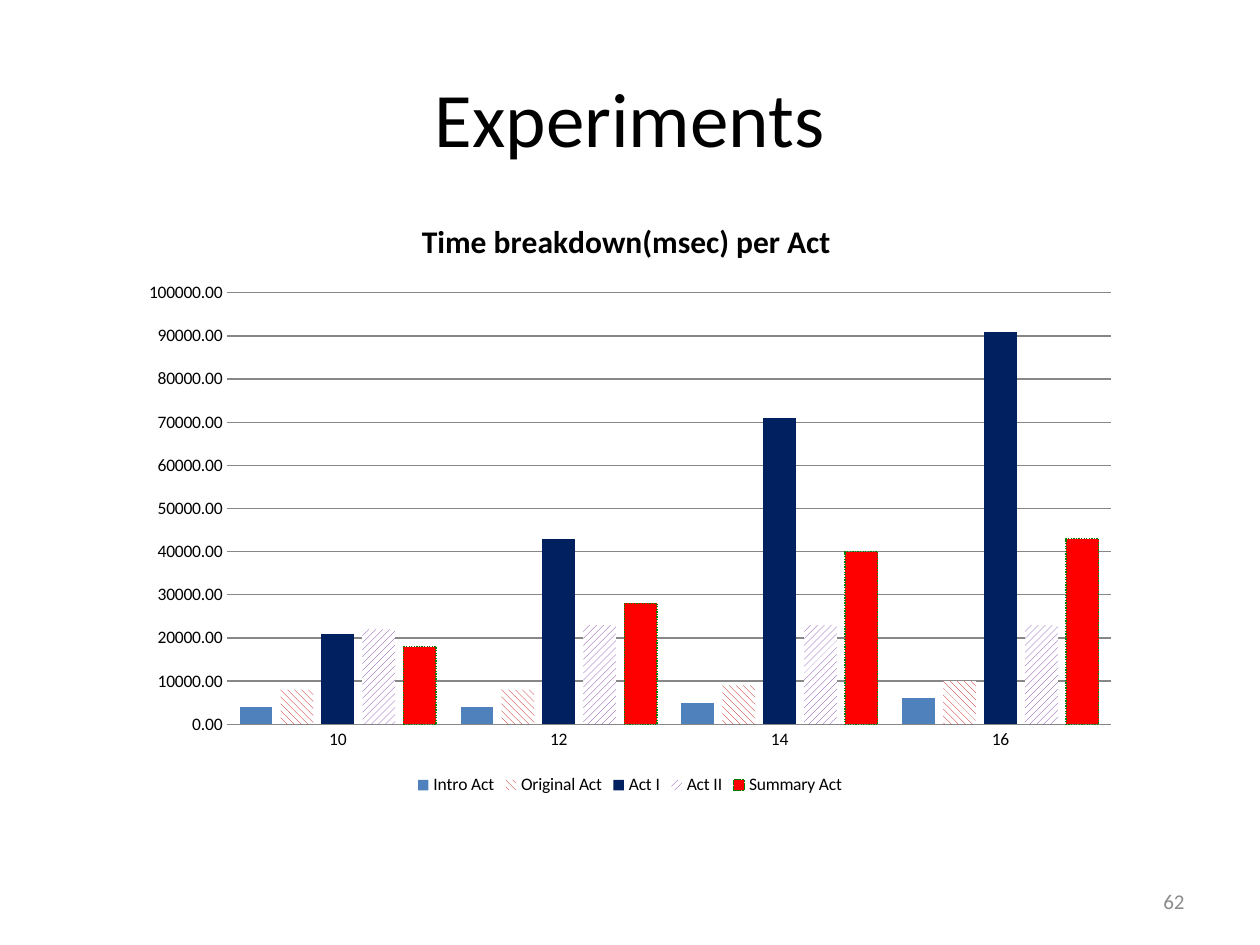
"""Build the Experiments slide: a clustered column chart of time per act."""
from pptx import Presentation
from pptx import util as u
from pptx.chart.data import CategoryChartData
from pptx.dml.color import RGBColor
from pptx.enum import chart as charts, dml, text

TITLE = "Experiments"
CHART_TITLE = "Time breakdown(msec) per Act "
PAGE_NUMBER = "62"
CATEGORIES = ["10", "12", "14", "16"]
SERIES = [
    {"name": "Intro Act", "values": (4000, 4000, 5000, 6000), "fill": "4F81BD"},
    {"name": "Original Act", "values": (8000, 8000, 9000, 10000), "fill": "C00000",
     "pattern": dml.MSO_PATTERN.WIDE_DOWNWARD_DIAGONAL},
    {"name": "Act I", "values": (21000, 43000, 71000, 91000), "fill": "002060"},
    {"name": "Act II", "values": (22000, 23000, 23000, 23000), "fill": "7030A0",
     "pattern": dml.MSO_PATTERN.WIDE_UPWARD_DIAGONAL},
    {"name": "Summary Act", "values": (18000, 28000, 40000, 43000), "fill": "FF0000",
     "outline": "008000"},
]

BOXES = {
    "title": (63, 38, 1134, 157),
    "chart": (129, 195, 1002, 605),
    "number": (903, 876, 294, 50),
}
SCALE = 914400 / 126


class Theme:
    font = "Calibri"
    ink, muted, grid, paper = "000000", "8C8C8C", "878787", "FFFFFF"
    title, chart_title, label, number = 44, 18, 10, 12


def place(name):
    return [u.Emu(round(px * SCALE)) for px in BOXES[name]]


def style(font, size, color=Theme.ink, bold=False):
    font.name, font.size, font.bold = Theme.font, u.Pt(size), bold
    font.color.rgb = RGBColor.from_string(color)


def write(frame, words, align, size, color=Theme.ink, bold=False):
    para = frame.paragraphs[0]
    para.alignment = align
    span = para.add_run()
    span.text = words
    style(span.font, size, color, bold)


def paint(series, item):
    fill = series.format.fill
    color = RGBColor.from_string(item["fill"])
    if "pattern" in item:
        fill.patterned()
        fill.pattern = item["pattern"]
        fill.fore_color.rgb = color
        fill.back_color.rgb = RGBColor.from_string(Theme.paper)
    else:
        fill.solid()
        fill.fore_color.rgb = color
    line = series.format.line
    if "outline" in item:
        line.color.rgb = RGBColor.from_string(item["outline"])
        line.width = u.Pt(0.75)
        line.dash_style = dml.MSO_LINE.ROUND_DOT
    else:
        line.fill.background()
    series.invert_if_negative = False


def add_time_chart(page):
    data = CategoryChartData(number_format="0.00")
    data.categories = CATEGORIES
    for item in SERIES:
        data.add_series(item["name"], item["values"])
    kind = charts.XL_CHART_TYPE.COLUMN_CLUSTERED
    chart = page.shapes.add_chart(kind, *place("chart"), data).chart
    style(chart.font, Theme.label)
    chart.has_title = True
    write(chart.chart_title.text_frame, CHART_TITLE, text.PP_ALIGN.CENTER,
          Theme.chart_title, bold=True)
    chart.chart_title.include_in_layout = False
    chart.has_legend = True
    chart.legend.position = charts.XL_LEGEND_POSITION.BOTTOM
    chart.legend.include_in_layout = False

    plot = chart.plots[0]
    plot.gap_width, plot.overlap, plot.vary_by_categories = 75, -25, False
    for series, item in zip(plot.series, SERIES):
        paint(series, item)

    grid = RGBColor.from_string(Theme.grid)
    amounts, groups = chart.value_axis, chart.category_axis
    for axis in (amounts, groups):
        axis.major_tick_mark = axis.minor_tick_mark = charts.XL_TICK_MARK.NONE
    amounts.minimum_scale, amounts.maximum_scale, amounts.major_unit = 0, 100000, 10000
    amounts.tick_labels.number_format = "0.00"
    amounts.tick_labels.number_format_is_linked = False
    amounts.has_major_gridlines = True
    amounts.major_gridlines.format.line.color.rgb = grid
    amounts.format.line.fill.background()
    groups.format.line.color.rgb = grid


def main():
    deck = Presentation()
    deck.slide_width, deck.slide_height = u.Inches(10), u.Inches(7.5)
    page = deck.slides.add_slide(deck.slide_layouts[5])

    heading = page.shapes.title
    heading.left, heading.top, heading.width, heading.height = place("title")
    heading.text_frame.vertical_anchor = text.MSO_ANCHOR.MIDDLE
    write(heading.text_frame, TITLE, text.PP_ALIGN.CENTER, Theme.title)

    add_time_chart(page)

    box = page.shapes.add_textbox(*place("number"))
    box.text_frame.word_wrap = True
    box.text_frame.vertical_anchor = text.MSO_ANCHOR.MIDDLE
    write(box.text_frame, PAGE_NUMBER, text.PP_ALIGN.RIGHT, Theme.number, Theme.muted)

    deck.save("out.pptx")


if __name__ == "__main__":
    main()
